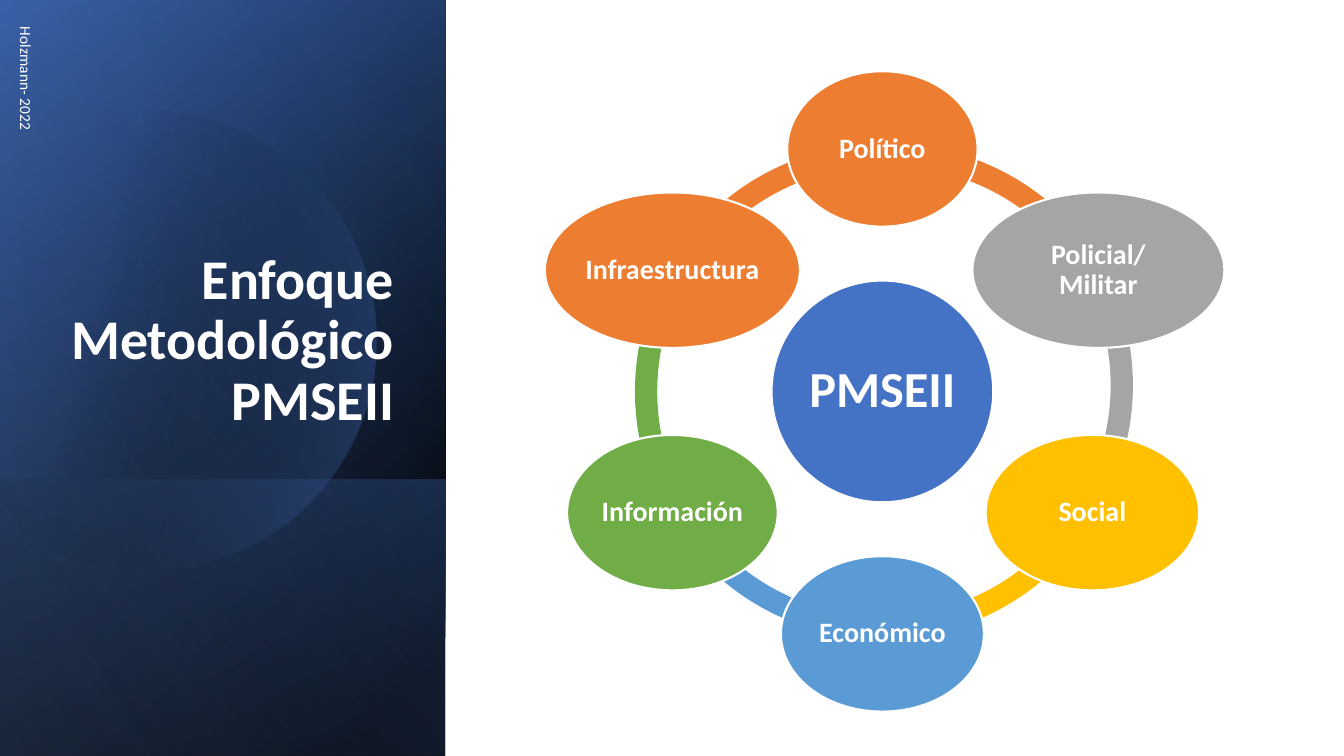
from math import cos, sin, acos, pi, radians
from pptx import Presentation
from pptx.dml.color import RGBColor
from pptx.enum.shapes import MSO_SHAPE
from pptx.enum.text import MSO_ANCHOR, MSO_AUTO_SIZE, PP_ALIGN
from pptx.oxml.ns import qn
from pptx.oxml.xmlchemy import OxmlElement
from pptx.util import Pt

TITLE = "Enfoque Metodológico PMSEII"
CREDIT = "Holzmann- 2022"
HUB = "PMSEII"
# label, fill, width, shift
NODES = [
    ("Político", "ED7D31", 136, 0),
    ("Policial/Militar", "A5A5A5", 180, 4.3),
    ("Social", "FFC000", 152.5, 0),
    ("Económico", "5B9BD5", 145, 0),
    ("Información", "70AD47", 150.5, 0),
    ("Infraestructura", "ED7D31", 182.2, 0),
]
ARCS = [
    ("ED7D31", 210, 270, 0, 0),
    ("70AD47", 150, 210, 0, 0),
    ("5B9BD5", 90, 150, 0, 0),
    ("FFC000", 30, 90, 0, 0),
    ("A5A5A5", 331.6, 31.6, 2.2, -4.3),
    ("ED7D31", 268.4, 330, 5, 0),
]
BACK = [
    (270, 540, 50, (8, "000000", 100), (100, "2F5597", 100)),
    (270, 540, 30, (0, "000000", 0), (99, "4472C4", 46)),
    (441.4, 197.2, 130, (2, "4472C4", 29), (100, "000000", 30)),
]
DISC = (14, (29, "000000", 0), (100, "4472C4", 43))
GLOW = (270, 540, 120, (0, "000000", 0), (99, "8FAADC", 11))

THEME = dict(font="Calibri", text="FFFFFF", hub="4472C4",
             title=40, core=36, label=20, credit=11, line=1.5)
SIDE = 318.2
MID = (630.3, 279.6)
ORBIT, RING, BAND = 173.2, 353.5, 0.045
TALL, CORE = 111, 158.4


def apply(obj, **vals):
    for key, val in vals.items():
        setattr(obj, key, val)


def tint(name):
    return RGBColor.from_string(name)


def write(frame, text, size, align, bold=True, inset=None):
    frame.text = text
    apply(frame, word_wrap=True, auto_size=MSO_AUTO_SIZE.NONE,
          vertical_anchor=MSO_ANCHOR.MIDDLE)
    if inset is not None:
        apply(frame, **{f"margin_{side}": Pt(inset)
                        for side in ("left", "right", "top", "bottom")})
    para = frame.paragraphs[0]
    apply(para, alignment=align, line_spacing=0.9)
    apply(para.font, name=THEME["font"], size=Pt(size), bold=bold)
    para.font.color.rgb = tint(THEME["text"])


def center(kind, x, y, wide, high):
    shape = shapes.add_shape(kind, Pt(x - wide / 2), Pt(y - high / 2),
                             Pt(wide), Pt(high))
    shape.shadow.inherit = False
    shape.line.fill.background()
    return shape


def paint(shape, angle, *stops):
    fill = shape.fill
    fill.gradient()
    fill.gradient_angle = 360 - angle
    for stop, (place, color, _) in zip(fill.gradient_stops, stops):
        stop.position = place / 100
        stop.color.rgb = tint(color)
    marks = list(shape.element.spPr.iter(qn("a:srgbClr")))
    for mark, (_, _, alpha) in zip(marks, stops):
        if alpha < 100:
            node = OxmlElement("a:alpha")
            node.set("val", str(alpha * 1000))
            mark.append(node)


def panel(y, wide, angle, *stops):
    shape = center(MSO_SHAPE.RECTANGLE, SIDE / 2, y, wide, SIDE)
    shape.rotation = 90
    shape.element.spPr.find(qn("a:xfrm")).set("flipH", "1")
    paint(shape, angle, *stops)


def disc(x, y, rad):
    edge = pi - acos(x / rad)
    turns = [edge * (step / 45 - 1) for step in range(91)]
    dots = [(Pt(x + rad * cos(t)), Pt(y + rad * sin(t))) for t in turns]
    form = shapes.build_freeform(*dots[0])
    form.add_line_segments(dots[1:], close=True)
    shape = form.convert_to_shape()
    shape.shadow.inherit = False
    shape.line.fill.background()
    paint(shape, *DISC)


def bubble(text, color, x, y, wide, high, size, inset):
    shape = center(MSO_SHAPE.OVAL, x, y, wide, high)
    shape.fill.solid()
    shape.fill.fore_color.rgb = tint(color)
    shape.line.color.rgb = tint(THEME["text"])
    shape.line.width = Pt(THEME["line"])
    write(shape.text_frame, text, size, PP_ALIGN.CENTER, inset=inset)


deck = Presentation()
apply(deck, slide_width=Pt(960), slide_height=Pt(540))
slide = deck.slides.add_slide(deck.slide_layouts[5])
shapes = slide.shapes

for row in BACK:
    panel(*row)
disc(104.4, 243.4, 164.2)
panel(*GLOW)

title = shapes.title
apply(title, left=Pt(36.7), top=Pt(46), width=Pt(252), height=Pt(266.4))
write(title.text_frame, TITLE, THEME["title"], PP_ALIGN.RIGHT)
title.text_frame.vertical_anchor = MSO_ANCHOR.BOTTOM
title.element.getparent().append(title.element)

note = shapes.add_textbox(Pt(-143.3), Pt(159.8), Pt(324), Pt(28.8))
note.rotation = 90
write(note.text_frame, CREDIT, THEME["credit"], PP_ALIGN.LEFT, bold=False)
note.text_frame.paragraphs[0].line_spacing = 1

for color, start, end, dx, dy in ARCS:
    arc = center(MSO_SHAPE.BLOCK_ARC, MID[0] + dx, MID[1] + dy, RING, RING)
    for spot, val in enumerate((start * 0.6, end * 0.6, BAND)):
        arc.adjustments[spot] = val
    arc.fill.solid()
    arc.fill.fore_color.rgb = tint(color)

bubble(HUB, THEME["hub"], *MID, CORE, CORE, THEME["core"], 3.6)
for spot, (text, color, wide, shift) in enumerate(NODES):
    turn = radians(360 / len(NODES) * spot - 90)
    bubble(text, color, MID[0] + ORBIT * cos(turn) + shift,
           MID[1] + ORBIT * sin(turn), wide, TALL, THEME["label"], 2)

deck.save("out.pptx")
